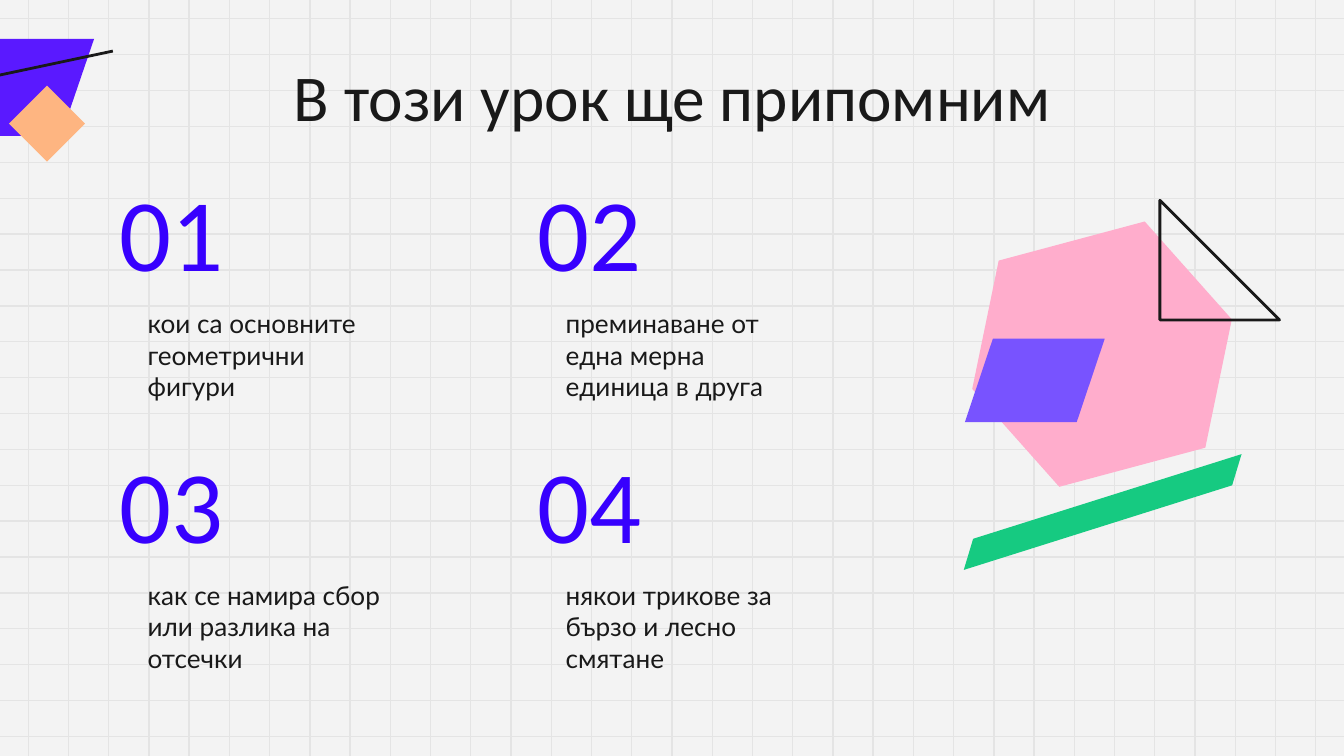
from dataclasses import dataclass
from typing import Optional

from lxml import etree
from pptx import Presentation
from pptx import util as u
from pptx.dml.color import RGBColor
from pptx.enum import shapes, text
from pptx.oxml.ns import qn

HUES = {
    "paper": "F3F3F3",
    "grid": "E4E4E4",
    "ink": "191919",
    "number": "3700FE",
    "indigo": "5A19FF",
    "violet": "7853FF",
    "peach": "FEB581",
    "pink": "FFADCC",
    "green": "16CA81",
}
KIND = shapes.MSO_SHAPE


@dataclass
class Box:
    left: float
    top: float
    width: float
    height: float


@dataclass
class Figure:
    kind: KIND
    box: Box
    fill: Optional[str] = None
    turn: float = 0
    adjust: tuple[float, ...] = ()


@dataclass
class Style:
    font: str
    size: float
    hue: str
    anchor: text.MSO_ANCHOR
    align: text.PP_ALIGN = text.PP_ALIGN.LEFT
    inset: float = 0.1


HEAD = Style("Calibri", 35, "ink", text.MSO_ANCHOR.MIDDLE, text.PP_ALIGN.CENTER, 0)
NUMBER = Style("Calibri", 55, "number", text.MSO_ANCHOR.MIDDLE)
BODY = Style("Lato", 14, "ink", text.MSO_ANCHOR.TOP)

TOPICS = [
    "кои са основните геометрични фигури",
    "преминаване от една мерна единица в друга",
    "как се намира сбор или разлика на отсечки",
    "някои трикове за бързо и лесно смятане",
]

CORNER = [
    Figure(KIND.FLOWCHART_DATA, Box(-0.53, 0.29, 1.23, 0.72), "indigo"),
    Figure(KIND.RECTANGLE, Box(0.15, 0.72, 0.4, 0.4), "peach", 315),
]
COLLAGE = [
    Figure(KIND.HEXAGON, Box(7.2, 1.76, 2, 1.75), "pink", 345, (0.25, 1.15)),
    Figure(KIND.RIGHT_TRIANGLE, Box(8.63, 1.49, 0.89, 0.89)),
    Figure(KIND.PARALLELOGRAM, Box(7.09, 3.71, 2.23, 0.2), "green", 342.5, (0.68,)),
    Figure(KIND.FLOWCHART_DATA, Box(7.18, 2.52, 1.04, 0.62), "violet"),
]


def paint(name: str) -> RGBColor:
    return RGBColor.from_string(HUES[name])


def inches(box: Box) -> list[u.Length]:
    return [u.Inches(n) for n in (box.left, box.top, box.width, box.height)]


def spread(first: float, last: float, count: int) -> list[float]:
    return [first + i * (last - first) / (count - 1) for i in range(count)]


def draw_line(slide, x1: float, y1: float, x2: float, y2: float,
              hue: str, weight: float) -> None:
    ends = [u.Inches(n) for n in (x1, y1, x2, y2)]
    line = slide.shapes.add_connector(shapes.MSO_CONNECTOR.STRAIGHT, *ends)
    line.line.color.rgb = paint(hue)
    line.line.width = u.Pt(weight)
    etree.SubElement(line._element.spPr, qn("a:effectLst"))


def draw_figure(slide, item: Figure) -> None:
    shape = slide.shapes.add_shape(item.kind, *inches(item.box))
    shape.shadow.inherit = False
    shape.rotation = item.turn
    for i, value in enumerate(item.adjust):
        shape.adjustments[i] = value
    if item.fill:
        shape.fill.solid()
        shape.fill.fore_color.rgb = paint(item.fill)
        shape.line.fill.background()
    else:
        shape.fill.background()
        shape.line.color.rgb = paint("ink")
        shape.line.width = u.Pt(1.5)


def write(shape, words: str, style: Style) -> None:
    frame = shape.text_frame
    frame.text = words
    frame.word_wrap = True
    frame.auto_size = text.MSO_AUTO_SIZE.NONE
    frame.vertical_anchor = style.anchor
    frame.margin_left = frame.margin_right = u.Inches(style.inset)
    frame.margin_top = frame.margin_bottom = u.Inches(style.inset)
    para = frame.paragraphs[0]
    para.alignment = style.align
    font = para.runs[0].font
    font.name = style.font
    font.size = u.Pt(style.size)
    font.color.rgb = paint(style.hue)


def add_text(slide, box: Box, words: str, style: Style) -> None:
    write(slide.shapes.add_textbox(*inches(box)), words, style)


def draw_grid(slide) -> None:
    for y in spread(0.14, 5.48, 21):
        draw_line(slide, 10.08, y, -0.08, y, "grid", 0.75)
    for x in spread(0.21, 9.79, 33):
        draw_line(slide, x, -0.01, x, 5.64, "grid", 0.75)


def place_title(slide, words: str) -> None:
    title = slide.shapes.title
    title.left, title.top, title.width, title.height = inches(Box(0.79, 0.46, 8.43, 0.5))
    write(title, words, HEAD)
    slide.shapes._spTree.append(title._element)


def main() -> None:
    deck = Presentation()
    deck.slide_width = u.Inches(10)
    deck.slide_height = u.Inches(10 * 9 / 16)
    slide = deck.slides.add_slide(deck.slide_layouts[5])
    slide.background.fill.solid()
    slide.background.fill.fore_color.rgb = paint("paper")

    draw_grid(slide)
    for item in CORNER:
        draw_figure(slide, item)
    draw_line(slide, -0.67, 0.7, 0.84, 0.38, "ink", 1.5)

    for i, topic in enumerate(TOPICS):
        row, col = divmod(i, 2)
        left, top = 0.79 + col * 3.11, 1.39 + row * 2.02
        add_text(slide, Box(left, top, 1.3, 0.65), f"{i + 1:02}", NUMBER)
        add_text(slide, Box(left + 0.21, top + 0.8, 1.98, 0.8), topic, BODY)

    place_title(slide, "В този урок ще припомним")
    for item in COLLAGE:
        draw_figure(slide, item)
    deck.save("out.pptx")


if __name__ == "__main__":
    main()
